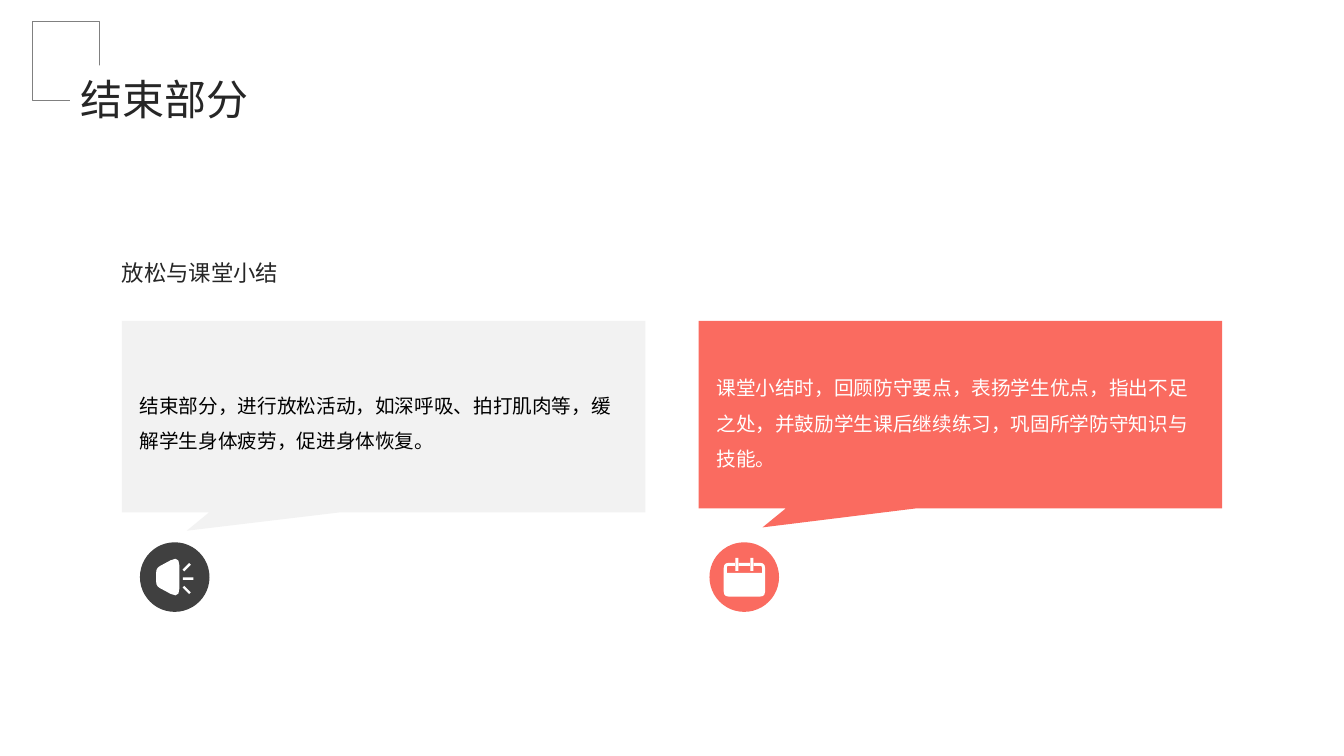
import math

from lxml import etree
from pptx import Presentation
from pptx import util as u
from pptx.dml.color import RGBColor
from pptx.enum import shapes, text
from pptx.oxml.ns import qn

FONT = "Noto Sans CJK SC"
COLORS = {
    "white": "FFFFFF", "black": "000000", "ink": "262626", "rule": "808080",
    "pale": "F2F2F2", "dark": "404040", "coral": "FA6B60",
}
CELL = u.Inches(0.1)
COLUMNS, ROWS = 133.33, 75
MARGIN = 12.1
CARD_WIDTH, CARD_GAP, CARD_TOP = 51.92, 5.3, 31.83
CARD_PADDING = 1.76
BADGE_SIZE, BADGE_TOP = 6.9, 53.8
CURVE_STEPS = 3


def cells(*counts):
    return [u.Emu(round(count * CELL)) for count in counts]


def rgb(name):
    return RGBColor.from_string(COLORS[name])


def paint(shape, fill=None, line=None):
    shape.shadow.inherit = False
    if fill:
        shape.fill.solid()
        shape.fill.fore_color.rgb = rgb(fill)
    else:
        shape.fill.background()
    if line:
        shape.line.color.rgb = rgb(line)
        shape.line.width = u.Pt(0.75)
    else:
        shape.line.fill.background()


def add_preset(page, kind, area, fill=None, line=None, adjustments=()):
    shape = page.shapes.add_shape(kind, *cells(*area))
    for index, value in enumerate(adjustments):
        shape.adjustments[index] = value
    paint(shape, fill, line)


def add_text(page, words, area, size, color, anchor, spacing=1.5, grow=False):
    box = page.shapes.add_textbox(*cells(*area))
    frame = box.text_frame
    frame.text = words
    frame.word_wrap = True
    frame.vertical_anchor = anchor
    frame.margin_left = frame.margin_right = 0
    frame.margin_top = frame.margin_bottom = 0
    if grow:
        frame.auto_size = text.MSO_AUTO_SIZE.SHAPE_TO_FIT_TEXT
    para = frame.paragraphs[0]
    para.line_spacing = spacing
    span = para.runs[0]
    span.font.size = u.Pt(size)
    span.font.name = FONT
    span.font.color.rgb = rgb(color)
    east_asian = etree.SubElement(span.font._element, qn("a:ea"))
    east_asian.set("typeface", FONT)


def toward(start, end, distance):
    share = distance / math.dist(start, end)
    return tuple(a + (b - a) * share for a, b in zip(start, end))


def round_corners(corners):
    """Turn (x, y, radius) corners into the points of a smooth outline."""
    points = []
    for index, (x, y, radius) in enumerate(corners):
        corner = (x, y)
        if not radius:
            points.append(corner)
            continue
        enter = toward(corner, corners[index - 1][:2], radius)
        leave = toward(corner, corners[(index + 1) % len(corners)][:2], radius)
        for step in range(CURVE_STEPS + 1):
            t = step / CURVE_STEPS
            points.append(tuple(
                (1 - t) ** 2 * a + 2 * t * (1 - t) * b + t ** 2 * c
                for a, b, c in zip(enter, corner, leave)))
    return points


def bar(start, end, width):
    """Corners of a straight bar between two points."""
    (x1, y1), (x2, y2) = start, end
    scale = width / 2 / math.dist(start, end)
    dx, dy = (y1 - y2) * scale, (x2 - x1) * scale
    return [(x1 + dx, y1 + dy, 0), (x2 + dx, y2 + dy, 0),
            (x2 - dx, y2 - dy, 0), (x1 - dx, y1 - dy, 0)]


def speaker_outlines():
    cone = [(0, 0.86, 0.4), (2.3, -0.39, 1), (2.3, 3.89, 1), (0, 2.64, 0.4)]
    rays = [((2.7, 1.1), (3.35, 0.45)), ((2.65, 1.9), (3.7, 1.9)),
            ((2.7, 2.7), (3.35, 3.35))]
    return [cone] + [bar(start, end, 0.24) for start, end in rays]


def calendar_outlines():
    frame = [
        (1.1, 0.5, 0), (1.1, 0.8, 0), (0.3, 0.8, 0.2), (0.3, 1.5, 0),
        (3.8, 1.5, 0), (3.8, 0.8, 0.2), (3, 0.8, 0), (3, 0.5, 0),
        (4.1, 0.5, 0.5), (4.1, 3.85, 0.5), (0, 3.85, 0.5), (0, 0.5, 0.5),
    ]
    bridge = [(1.5, 0.5, 0), (2.6, 0.5, 0), (2.6, 0.8, 0), (1.5, 0.8, 0)]
    rings = [bar((x, 0), (x, 1.3), 0.3) for x in (1.3, 2.8)]
    return [frame, bridge] + rings


def add_icon(page, outlines, left, top):
    builder = None
    for corners in outlines:
        points = [cells(left + x, top + y) for x, y in round_corners(corners)]
        if builder is None:
            builder = page.shapes.build_freeform(*points[0], scale=1.0)
        else:
            builder.move_to(*points[0])
        builder.add_line_segments(points[1:], close=True)
    paint(builder.convert_to_shape(), "white")


def add_card(page, column, words, height, tail, fill, color):
    left = MARGIN + column * (CARD_WIDTH + CARD_GAP)
    add_preset(page, shapes.MSO_SHAPE.RECTANGULAR_CALLOUT,
               (left, CARD_TOP, CARD_WIDTH, height), fill, adjustments=tail)
    add_text(page, words, (left + CARD_PADDING, CARD_TOP + 1.92, 48.4, 15.3),
             14, color, text.MSO_ANCHOR.MIDDLE)


def add_badge(page, left, fill, outlines, icon_left, icon_top):
    add_preset(page, shapes.MSO_SHAPE.ROUNDED_RECTANGLE,
               (left, BADGE_TOP, BADGE_SIZE, BADGE_SIZE), fill,
               adjustments=[0.5])
    add_icon(page, outlines, icon_left, icon_top)


def add_heading(page):
    add_preset(page, shapes.MSO_SHAPE.RECTANGLE, (3.2, 2.1, 6.7, 7.84),
               line="rule")
    add_preset(page, shapes.MSO_SHAPE.RECTANGLE, (6.96, 6.5, 6.1, 5), "white")
    add_text(page, "结束部分", (8.04, 6.78, 111, 4.6), 30, "ink",
             text.MSO_ANCHOR.TOP, spacing=1.1, grow=True)


def main():
    deck = Presentation()
    deck.slide_width, deck.slide_height = cells(COLUMNS, ROWS)
    page = deck.slides.add_slide(deck.slide_layouts[6])

    add_card(page, 0,
             "结束部分，进行放松活动，如深呼吸、拍打肌肉等，缓解学生身体疲劳，促进身体恢复。",
             19, (-0.376, 0.596), "pale", "black")
    add_badge(page, 13.88, "dark", speaker_outlines(), 15.5, 55.5)
    add_card(page, 1,
             "课堂小结时，回顾防守要点，表扬学生优点，指出不足之处，并鼓励学生课后继续练习，巩固所学防守知识与技能。",
             18.6, (-0.378, 0.602), "coral", "white")
    add_badge(page, 70.38, "coral", calendar_outlines(), 71.8, 55.34)

    add_text(page, "放松与课堂小结", (MARGIN, 15.2, 109.2, 13.2), 16, "ink",
             text.MSO_ANCHOR.BOTTOM)
    add_heading(page)
    deck.save("out.pptx")


if __name__ == "__main__":
    main()
